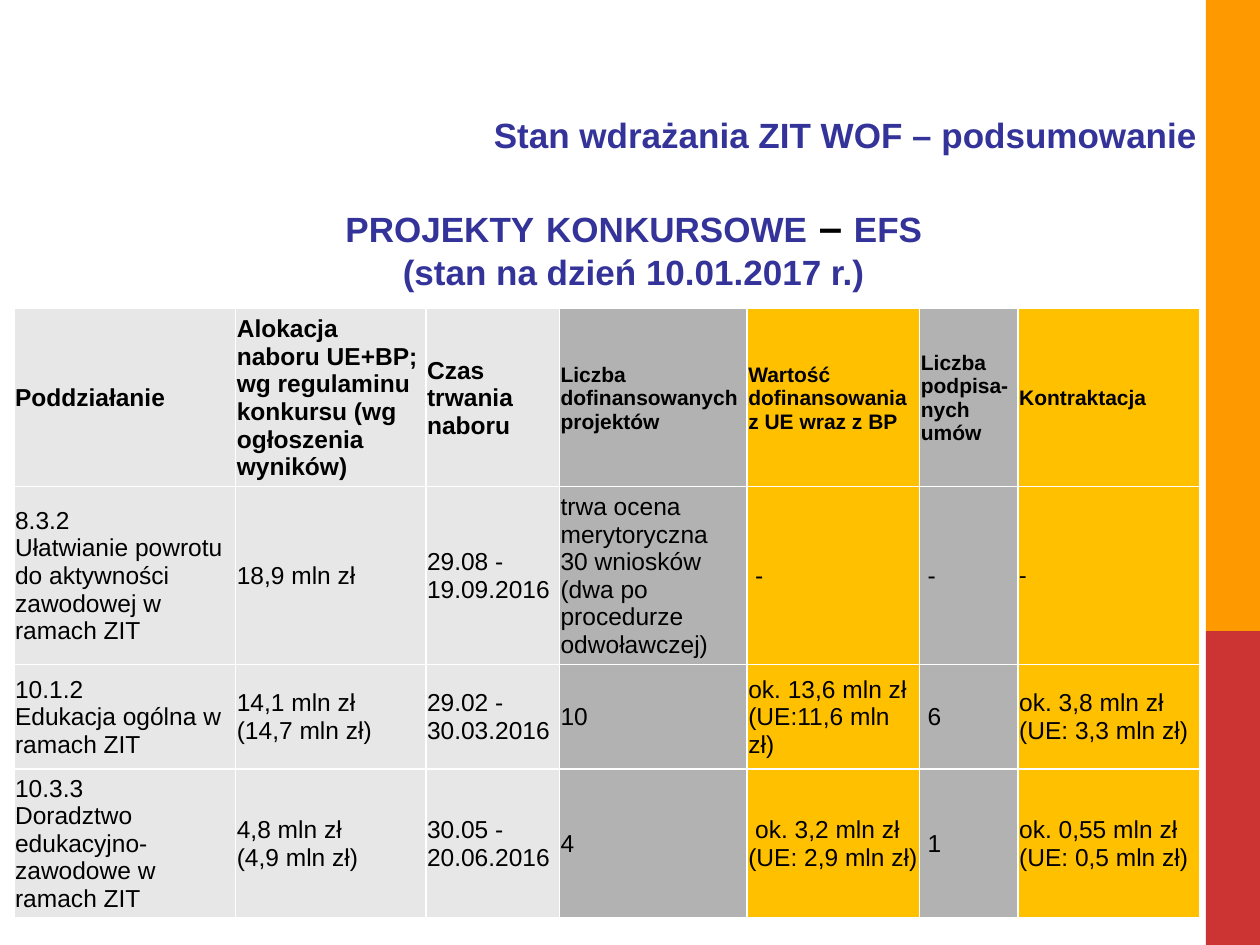
import dataclasses

import pptx
import pptx.dml.color
import pptx.enum.shapes
import pptx.enum.text
import pptx.oxml
import pptx.oxml.ns
import pptx.util

Inches = pptx.util.Inches
Pt = pptx.util.Pt

COLORS = {
    "orange": "FF9900",
    "red": "CC3333",
    "title": "333399",
    "text": "000000",
    "border": "FFFFFF",
    "light": "E7E7E7",
    "grey": "B2B2B2",
    "yellow": "FFC000",
}


@dataclasses.dataclass
class Bar:
    top: float
    height: float
    color: str


@dataclasses.dataclass
class Column:
    width: float
    fill: str
    header: str
    header_size: int


@dataclasses.dataclass
class TitleRun:
    text: str
    size: int = 20
    color: str = "title"


BARS = [Bar(0, 5.01, "orange"), Bar(5.01, 2.49, "red")]

HEADING = [TitleRun("Stan wdrażania ZIT WOF – podsumowanie")]
SUBHEADING = [
    TitleRun("PROJEKTY"),
    TitleRun(" ", 24, "text"),
    TitleRun("KONKURSOWE"),
    TitleRun(" – ", 24, "text"),
    TitleRun("EFS\v(stan na dzień 10.01.2017 r.)"),
]

COLUMNS = [
    Column(1.76, "light", "Poddziałanie", 14),
    Column(1.51, "light", "Alokacja naboru UE+BP; wg regulaminu konkursu "
           "(wg ogłoszenia wyników)", 14),
    Column(1.06, "light", "Czas trwania naboru", 14),
    Column(1.49, "grey", "Liczba dofinansowanych projektów", 12),
    Column(1.37, "yellow", "Wartość dofinansowania z UE wraz z BP", 12),
    Column(0.78, "grey", "Liczba podpisa-nych umów", 12),
    Column(1.44, "yellow", "Kontraktacja", 12),
]
ROW_HEIGHTS = [1.41, 1.41, 0.83, 1.18]

# \v is a line break, \n starts a new paragraph
ROWS = [
    ["8.3.2\vUłatwianie powrotu do aktywności zawodowej w ramach ZIT",
     "18,9 mln zł", "29.08 - 19.09.2016",
     "trwa ocena merytoryczna\n30 wniosków\n(dwa po procedurze odwoławczej)",
     " -", " -", "-"],
    ["10.1.2\vEdukacja ogólna w ramach ZIT",
     "14,1 mln zł \v(14,7 mln zł)", "29.02 - 30.03.2016", "10",
     "ok. 13,6 mln zł\n(UE:11,6 mln zł)", " 6",
     "ok. 3,8 mln zł\n(UE: 3,3 mln zł)"],
    ["10.3.3\vDoradztwo edukacyjno-zawodowe w ramach ZIT",
     "4,8 mln zł \v(4,9 mln zł)", "30.05 - 20.06.2016", "4",
     " ok. 3,2 mln zł\n(UE: 2,9 mln zł)", " 1",
     "ok. 0,55 mln zł\n(UE: 0,5 mln zł)"],
]


def rgb(name: str) -> pptx.dml.color.RGBColor:
    return pptx.dml.color.RGBColor.from_string(COLORS[name])


def style_font(font, size: int, color: str, bold: bool, name: str = "Arial") -> None:
    font.name = name
    font.size = Pt(size)
    font.bold = bold
    font.color.rgb = rgb(color)


def add_bar(slide, bar: Bar) -> None:
    shape = slide.shapes.add_shape(
        pptx.enum.shapes.MSO_SHAPE.RECTANGLE,
        Inches(9.57), Inches(bar.top), Inches(0.43), Inches(bar.height))
    shape.shadow.inherit = False
    shape.fill.solid()
    shape.fill.fore_color.rgb = rgb(bar.color)
    shape.line.fill.background()


def add_title(slide, left: float, top: float, width: float, height: float,
              runs: list[TitleRun]) -> None:
    box = slide.shapes.add_textbox(
        Inches(left), Inches(top), Inches(width), Inches(height))
    box.text_frame.word_wrap = False
    paragraph = box.text_frame.paragraphs[0]
    paragraph.alignment = pptx.enum.text.PP_ALIGN.CENTER
    for title_run in runs:
        for index, line in enumerate(title_run.text.split("\v")):
            if index:
                paragraph.add_line_break()
            run = paragraph.add_run()
            run.text = line
            style_font(run.font, title_run.size, title_run.color, True)


def add_borders(cell) -> None:
    properties = cell._tc.get_or_add_tcPr()
    for position, side in enumerate(("lnL", "lnR", "lnT", "lnB")):
        border = pptx.oxml.parse_xml(
            f'<a:{side} {pptx.oxml.ns.nsdecls("a")} w="12700"><a:solidFill>'
            f'<a:srgbClr val="{COLORS["border"]}"/></a:solidFill></a:{side}>')
        properties.insert(position, border)


def fill_cell(cell, text: str, fill: str, size: int, bold: bool) -> None:
    cell.fill.solid()
    cell.fill.fore_color.rgb = rgb(fill)
    add_borders(cell)
    cell.vertical_anchor = pptx.enum.text.MSO_ANCHOR.MIDDLE
    cell.margin_left = cell.margin_top = cell.margin_right = Inches(0.01)
    cell.margin_bottom = Inches(0)
    cell.text_frame.text = text
    font_name = "Calibri" if text == "-" else "Arial"
    for paragraph in cell.text_frame.paragraphs:
        style_font(paragraph.font, size, "text", bold, font_name)


def add_calls_table(slide) -> None:
    table = slide.shapes.add_table(
        len(ROW_HEIGHTS), len(COLUMNS), Inches(0.11), Inches(2.45),
        Inches(sum(column.width for column in COLUMNS)),
        Inches(sum(ROW_HEIGHTS))).table
    table.horz_banding = False
    for row, height in zip(table.rows, ROW_HEIGHTS):
        row.height = Inches(height)
    for index, column in enumerate(COLUMNS):
        table.columns[index].width = Inches(column.width)
        fill_cell(table.cell(0, index), column.header, column.fill,
                  column.header_size, True)
        for row_index, texts in enumerate(ROWS, start=1):
            fill_cell(table.cell(row_index, index), texts[index],
                      column.fill, 14, False)


def main() -> None:
    presentation = pptx.Presentation()
    presentation.slide_width = Inches(10)
    presentation.slide_height = Inches(7.5)
    slide = presentation.slides.add_slide(presentation.slide_layouts[6])

    # Side stripe
    for bar in BARS:
        add_bar(slide, bar)

    # Titles
    add_title(slide, 3.8, 0.85, 5.82, 0.44, HEADING)
    add_title(slide, 2.62, 1.54, 4.82, 1.18, SUBHEADING)

    # Table of calls for projects
    add_calls_table(slide)

    presentation.save("out.pptx")


if __name__ == "__main__":
    main()
